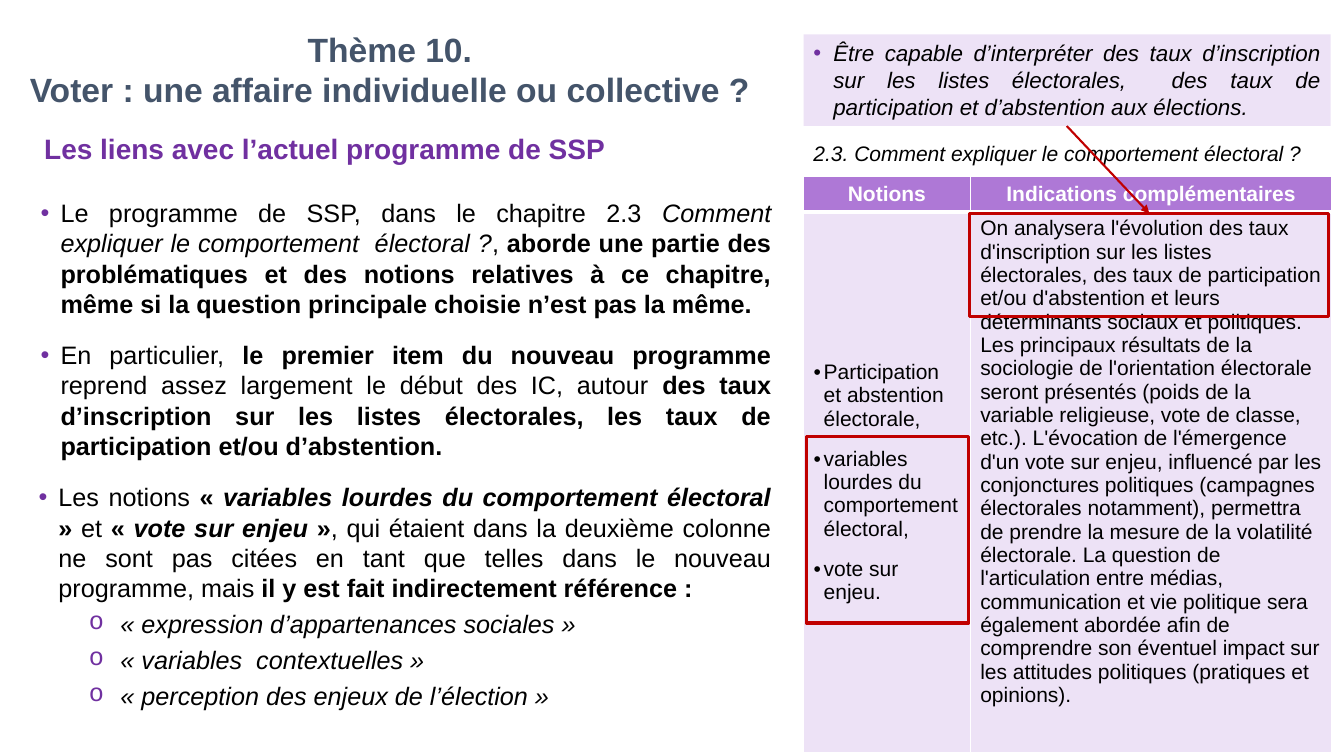
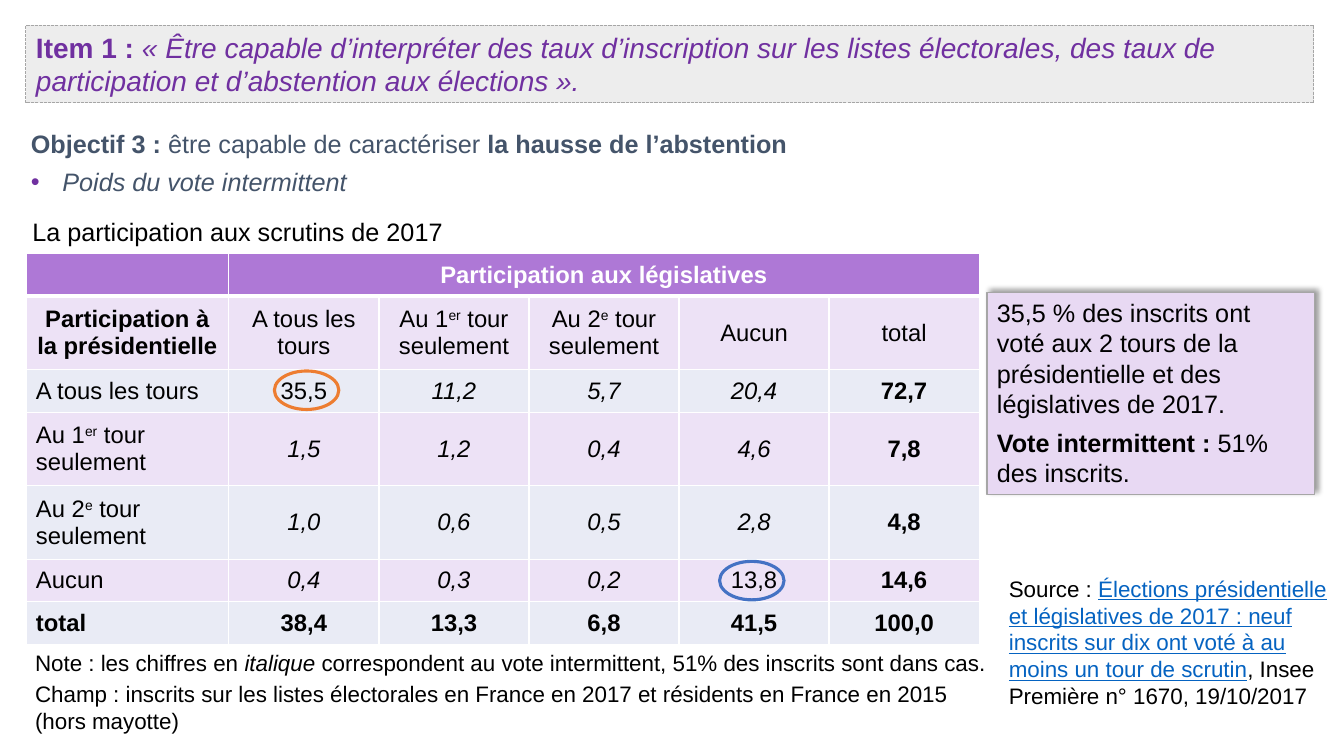
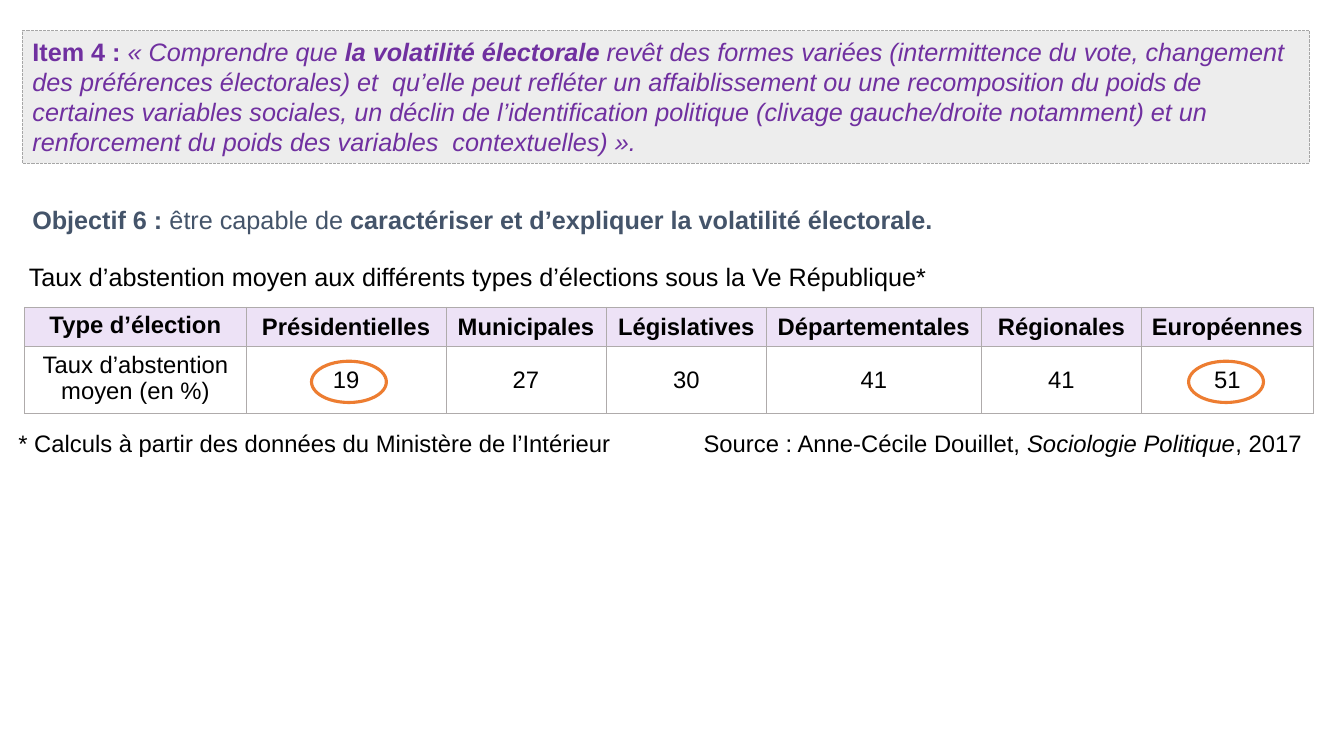
import pptx
import pptx.util
import pptx.dml.color
import pptx.enum.text
import pptx.enum.shapes
import pptx.enum.dml
import pptx.oxml.ns
import lxml.etree

Pt = pptx.util.Pt
Align = pptx.enum.text.PP_ALIGN
Anchor = pptx.enum.text.MSO_ANCHOR
Kind = pptx.enum.shapes.MSO_SHAPE
qn = pptx.oxml.ns.qn

FONT = "Arial"
BLACK, WHITE, SLATE = "000000", "FFFFFF", "44546A"
PURPLE, HEAD, PALE, BAND = "7030A0", "AE78D6", "EDE2F6", "E9EBF5"
LILAC, GREY, EDGE, RULE = "E8D9F3", "EDEDED", "A6A6A6", "AFABAB"
RED, ORANGE, BLUE, LINK = "C00000", "ED7D31", "4472C4", "0563C1"
ALIGN = {"l": Align.LEFT, "c": Align.CENTER, "r": Align.RIGHT, "j": Align.JUSTIFY}

THEME = ["Thème 10.", "Voter : une affaire individuelle ou collective ?"]
LINKS = ["Les liens avec l’actuel programme de SSP"]
POINTS = [
    ((22, 137.5, 536, 94), [
        ("", "Le programme de SSP, dans le chapitre 2.3 "),
        ("i", "Comment expliquer le comportement  électoral ?"),
        ("", ", "),
        ("b", "aborde une partie des problématiques et des notions relatives à ce chapitre, "
              "même si la question principale choisie n’est pas la même.")]),
    ((22, 239, 536, 94), [
        ("", "En particulier, "),
        ("b", "le premier item du nouveau programme "),
        ("", "reprend assez largement le début des IC, autour "),
        ("b", "des taux d’inscription sur les listes électorales, les taux de participation "
              "et/ou d’abstention.")]),
    ((20.5, 340.5, 537.5, 172), [
        ("b", "«"), ("bi", " variables lourdes du comportement électoral"), ("b", " » "),
        ("", "et "), ("b", "« "), ("bi", "vote sur enjeu"), ("b", " »"),
        ("", ", qui étaient dans la deuxième colonne ne sont pas citées en tant que telles "
             "dans le nouveau programme, mais "),
        ("b", "il y est fait indirectement référence :")]),
]
POINTS[2][1].insert(0, ("", "Les notions "))
HINTS = ["« expression d’appartenances sociales »", "« variables  contextuelles »",
         "« perception des enjeux de l’élection »"]
SKILL = [[("i", "Être capable d’interpréter des taux d’inscription sur les listes électorales,  "
                "des taux de participation et d’abstention aux élections.")]]
CHAPTER = [[("i", "2.3. Comment expliquer le comportement électoral ?")]]
NOTIONS = ["Participation et abstention électorale,",
           "variables lourdes du comportement électoral,", "vote sur enjeu."]
DETAIL = ("On analysera l'évolution des taux d'inscription sur les listes électorales, des taux de "
          "participation et/ou d'abstention et leurs déterminants sociaux et politiques. Les "
          "principaux résultats de la sociologie de l'orientation électorale seront présentés "
          "(poids de la variable religieuse, vote de classe, etc.). L'évocation de l'émergence "
          "d'un vote sur enjeu, influencé par les conjonctures politiques (campagnes électorales "
          "notamment), permettra de prendre la mesure de la volatilité électorale. La question de "
          "l'articulation entre médias, communication et vie politique sera également abordée afin "
          "de comprendre son éventuel impact sur les attitudes politiques (pratiques et opinions).")

ITEM1 = [[("b", "Item 1 : "),
          ("i", "« Être capable d’interpréter des taux d’inscription sur les listes électorales, "
                "des taux de participation et d’abstention aux élections ».")]]
GOAL3 = [[("b", "Objectif 3 : "), ("", "être capable de caractériser "),
          ("b", "la hausse de l’abstention")]]
WEIGHT = [[("i", "Poids du vote intermittent")]]
FIRST = [("", "Au 1"), ("^", "er"), ("", " tour seulement")]
SECOND = [("", "Au 2"), ("^", "e"), ("", " tour seulement")]
BALLOT = ["A tous les tours", FIRST, SECOND, "Aucun"]
VOTES = [
    [[("b", "Participation à la présidentielle")], *BALLOT, "total"],
    [BALLOT[0], "35,5", "11,2", "5,7", "20,4", "72,7"],
    [BALLOT[1], "1,5", "1,2", "0,4", "4,6", "7,8"],
    [BALLOT[2], "1,0", "0,6", "0,5", "2,8", "4,8"],
    [BALLOT[3], "0,4", "0,3", "0,2", "13,8", "14,6"],
    ["total", "38,4", "13,3", "6,8", "41,5", "100,0"],
]
STEADY = {"35,5", "13,8"}
READING = ["35,5 % des inscrits ont voté aux 2 tours de la présidentielle et des législatives de 2017.",
           [("b", "Vote intermittent : "), ("", "51% des inscrits.")]]
SOURCE = [[("", "Source : "),
           ("u", "Élections présidentielle et législatives de 2017 : neuf inscrits sur dix ont voté "
                 "à au moins un tour de scrutin"),
           ("", ", Insee Première n° 1670, 19/10/2017")]]
NOTES = [[("", "Note : les chiffres en "), ("i", "italique"),
          ("", " correspondent au vote intermittent, 51% des inscrits sont dans cas.")],
         "Champ : inscrits sur les listes électorales en France en 2017 et résidents en France "
         "en 2015 (hors mayotte)"]

ITEM4 = [[("b", "Item 4 : "), ("i", "« Comprendre que "), ("bi", "la volatilité électorale "),
          ("i", "revêt des formes variées (intermittence du vote, changement des préférences "
                "électorales) et  qu’elle peut refléter un affaiblissement ou une recomposition du "
                "poids de certaines variables sociales, un déclin de l’identification politique "
                "(clivage gauche/droite notamment) et un renforcement du poids des variables  "
                "contextuelles) ».")]]
GOAL6 = [[("b", "Objectif 6 : "), ("", "être capable de "),
          ("b", "caractériser et d’expliquer la volatilité électorale.")]]
RATES = [("Type d’élection", "Taux d’abstention moyen (en %)", 158.5),
         ("Présidentielles", "19", 142.5), ("Municipales", "27", 114.5),
         ("Législatives", "30", 114.5), ("Départementales", "41", 153.5),
         ("Régionales", "41", 114.5), ("Européennes", "51", 122.5)]
BOOK = [[("", "Source : Anne-Cécile Douillet, "), ("i", "Sociologie Politique"), ("", ", 2017")]]


def rgb(code):
    return pptx.dml.color.RGBColor.from_string(code)


def sub(node, tag, **attrs):
    return lxml.etree.SubElement(node, qn(tag), attrs)


def write(frame, paras, size, color=BLACK, bold=False, align="l", before=0,
          bullet=None, mark=PURPLE, left=0, hang=0, start=0):
    for n, para in enumerate(paras, start):
        p = frame.paragraphs[0] if n == 0 else frame.add_paragraph()
        p.alignment = ALIGN[align]
        p.space_before = Pt(before)
        for style, words in [("", para)] if isinstance(para, str) else para:
            run = p.add_run()
            run.text = words
            font = run.font
            font.name, font.size = FONT, Pt(size)
            font.bold, font.italic = bold or "b" in style, "i" in style
            font.underline = "u" in style
            font.color.rgb = rgb(LINK if "u" in style else color)
            if "^" in style:
                font._element.set("baseline", "30000")
        if bullet:
            props = p._p.get_or_add_pPr()
            props.set("marL", str(Pt(left)))
            props.set("indent", str(Pt(-hang)))
            sub(sub(props, "a:buClr"), "a:srgbClr", val=mark)
            sub(props, "a:buFont", typeface="Courier New" if bullet == "o" else FONT)
            sub(props, "a:buChar", char=bullet)


def place(shape, box):
    shape.left, shape.top, shape.width, shape.height = map(Pt, box)


def text(slide, box, paras, size, wrap=True, **look):
    shape = slide.shapes.add_textbox(*map(Pt, box))
    shape.text_frame.word_wrap = wrap
    write(shape.text_frame, paras, size, **look)
    return shape.text_frame


def title(slide, box, paras, size, **look):
    shape = slide.shapes.title
    place(shape, box)
    frame = shape.text_frame
    frame.auto_size = pptx.enum.text.MSO_AUTO_SIZE.NONE
    frame.word_wrap, frame.vertical_anchor = True, Anchor.TOP
    write(frame, paras, size, **look)
    return shape


def banner(slide, box, paras, size):
    shape = title(slide, box, paras, size, color=PURPLE)
    paint(shape, GREY, EDGE, 0.75)
    shape.line.dash_style = pptx.enum.dml.MSO_LINE.SQUARE_DOT


def paint(shape, fill, line, width=1):
    if fill:
        shape.fill.solid()
        shape.fill.fore_color.rgb = rgb(fill)
    else:
        shape.fill.background()
    if line:
        shape.line.color.rgb = rgb(line)
        shape.line.width = Pt(width)
    else:
        shape.line.fill.background()


def panel(slide, box, fill=None, line=None, width=2.25, kind=Kind.RECTANGLE):
    shape = slide.shapes.add_shape(kind, *map(Pt, box))
    shape.shadow.inherit = False
    paint(shape, fill, line, width)
    shape.text_frame.word_wrap = True
    shape.text_frame.vertical_anchor = Anchor.TOP
    return shape


def ring(slide, box, color):
    panel(slide, box, line=color, kind=Kind.OVAL)


def shade(shape):
    glow = sub(shape._element.spPr.find(qn("a:effectLst")), "a:outerShdw",
               blurRad=str(Pt(4)), dist=str(Pt(3)), dir="18900000", algn="bl", rotWithShape="0")
    sub(sub(glow, "a:srgbClr", val=BLACK), "a:alpha", val="40000")


def arrow(slide, start, end, color):
    line = slide.shapes.add_connector(pptx.enum.shapes.MSO_CONNECTOR.STRAIGHT, *map(Pt, start + end))
    line.line.color.rgb = rgb(color)
    line.line.width = Pt(1.5)
    sub(line.line._get_or_add_ln(), "a:tailEnd", type="triangle")
    sub(line._element.spPr, "a:effectLst")


def table(slide, spot, cols, rows):
    grid = slide.shapes.add_table(len(rows), len(cols), *map(Pt, spot + (sum(cols), sum(rows)))).table
    for col, wide in zip(grid.columns, cols):
        col.width = Pt(wide)
    for row, high in zip(grid.rows, rows):
        row.height = Pt(high)
    return grid


def cell(grid, row, col, paras, size, fill=None, edge=WHITE, width=1, base=None,
         anchor=Anchor.MIDDLE, **look):
    box = grid.cell(row, col)
    box.vertical_anchor = anchor
    write(box.text_frame, paras, size, **look)
    props = box._tc.get_or_add_tcPr()
    for side in "LRTB":
        thick = base if side == "B" and base else width
        line = sub(props, "a:ln" + side, w=str(Pt(thick)))
        sub(sub(line, "a:solidFill"), "a:srgbClr", val=edge)
    if fill:
        box.fill.solid()
        box.fill.fore_color.rgb = rgb(fill)
    else:
        box.fill.background()


def theme(slide):
    title(slide, (-1, 17, 559, 66), THEME, 24, color=SLATE, bold=True, align="c")
    text(slide, (24.5, 90.5, 523, 32), LINKS, 20, color=PURPLE, bold=True, before=6)
    for box, para in POINTS:
        frame = text(slide, box, [para], 18, align="j", before=12, bullet="•", left=14.17, hang=14.17)
    write(frame, HINTS_RUNS, 18, align="j", before=4, bullet="o", left=58.5, hang=22.5, start=1)
    grid = table(slide, (574, 126), (119, 258.5), (24, 386.5))
    for col, name in enumerate(["Notions", "Indications complémentaires"]):
        cell(grid, 0, col, [name], 15, HEAD, base=3, color=WHITE, bold=True, align="c")
    cell(grid, 1, 0, NOTIONS, 15, PALE, before=12, bullet="•", mark=BLACK, left=7.2, hang=7.2)
    cell(grid, 1, 1, [DETAIL], 15, PALE, anchor=Anchor.TOP)
    text(slide, (574, 96.5, 375, 25), CHAPTER, 15)
    skill = panel(slide, (574, 24.5, 376.5, 65.5), PALE)
    write(skill.text_frame, SKILL, 16, align="j", before=12, bullet="•", left=14.17, hang=14.17)
    panel(slide, (692.5, 152.5, 256.5, 73.5), line=RED)
    panel(slide, (576, 312, 116, 133), line=RED)
    arrow(slide, (762, 90), (821, 152.5), RED)


def votes(slide):
    banner(slide, (18.5, 18, 920, 55.5), ITEM1, 20)
    frame = text(slide, (15, 88, 919, 57), GOAL3, 18, color=SLATE, before=6)
    write(frame, WEIGHT, 18, color=SLATE, before=6, bullet="•", left=22.5, hang=22.5, start=1)
    text(slide, (16, 151, 348, 29), ["La participation aux scrutins de 2017"], 18, align="j")
    cols, rows = [145] + [107.2] * 5, [30.5, 52.5, 30.5, 52.5, 52.5, 30.5, 30.5]
    left, top = 18.5, 181
    grid = table(slide, (left, top), cols, rows)
    grid.cell(0, 1).merge(grid.cell(0, 5))
    for col in range(6):
        cell(grid, 0, col, ["Participation aux législatives"] if col == 1 else [], 17, HEAD, base=3,
             color=WHITE, bold=True, align="c")
    last = len(VOTES) - 1
    for r, row in enumerate(VOTES):
        for c, item in enumerate(row):
            inner = 0 < r < last and 0 < c < 5
            runs = [("i", item)] if inner and item not in STEADY else item
            cell(grid, r + 1, c, [runs], 17, BAND if r % 2 else PALE,
                 bold=r == last or (c == 5 and r > 0), align="c" if c or r == 0 else "l")
    ring(slide, (196, 265, 46, 27.5), ORANGE)
    ring(slide, (514, 401, 46, 27.5), BLUE)
    card = panel(slide, (705, 209, 234, 144), LILAC, EDGE, 0.75)
    shade(card)
    write(card.text_frame, READING, 18, before=6)
    text(slide, (713.5, 407, 242, 104.5), SOURCE, 16)
    text(slide, (18, 460, 701, 68.5), NOTES, 16, before=3)


def rates(slide):
    banner(slide, (16, 22, 919.5, 94.5), ITEM4, 18)
    text(slide, (16, 142.5, 919.5, 29), GOAL6, 18, color=SLATE, before=6)
    text(slide, (13.5, 183, 724, 29),
         ["Taux d’abstention moyen aux différents types d’élections sous la Ve République*"], 18)
    grid = table(slide, (17.5, 219.5), [rate[2] for rate in RATES], (28, 48))
    for col, (name, value, wide) in enumerate(RATES):
        look = dict(edge=RULE, width=0.5, align="c", anchor=Anchor.MIDDLE if col else Anchor.TOP)
        cell(grid, 0, col, [name], 17, PALE, bold=True, **look)
        cell(grid, 1, col, [value], 17, **look)
    for left in (222.5, 849):
        ring(slide, (left, 258, 53.5, 29.5), ORANGE)
    text(slide, (1.5, 303, 442, 28), ["* Calculs à partir des données du Ministère de l’Intérieur"],
         17, wrap=False, align="r")
    text(slide, (495.5, 303, 443, 28), BOOK, 17, wrap=False)


HINTS_RUNS = [[("i", hint)] for hint in HINTS]


def main():
    deck = pptx.Presentation()
    deck.slide_width, deck.slide_height = Pt(960), Pt(540)
    for build in (theme, votes, rates):
        build(deck.slides.add_slide(deck.slide_layouts[5]))
    deck.save("out.pptx")


if __name__ == "__main__":
    main()
